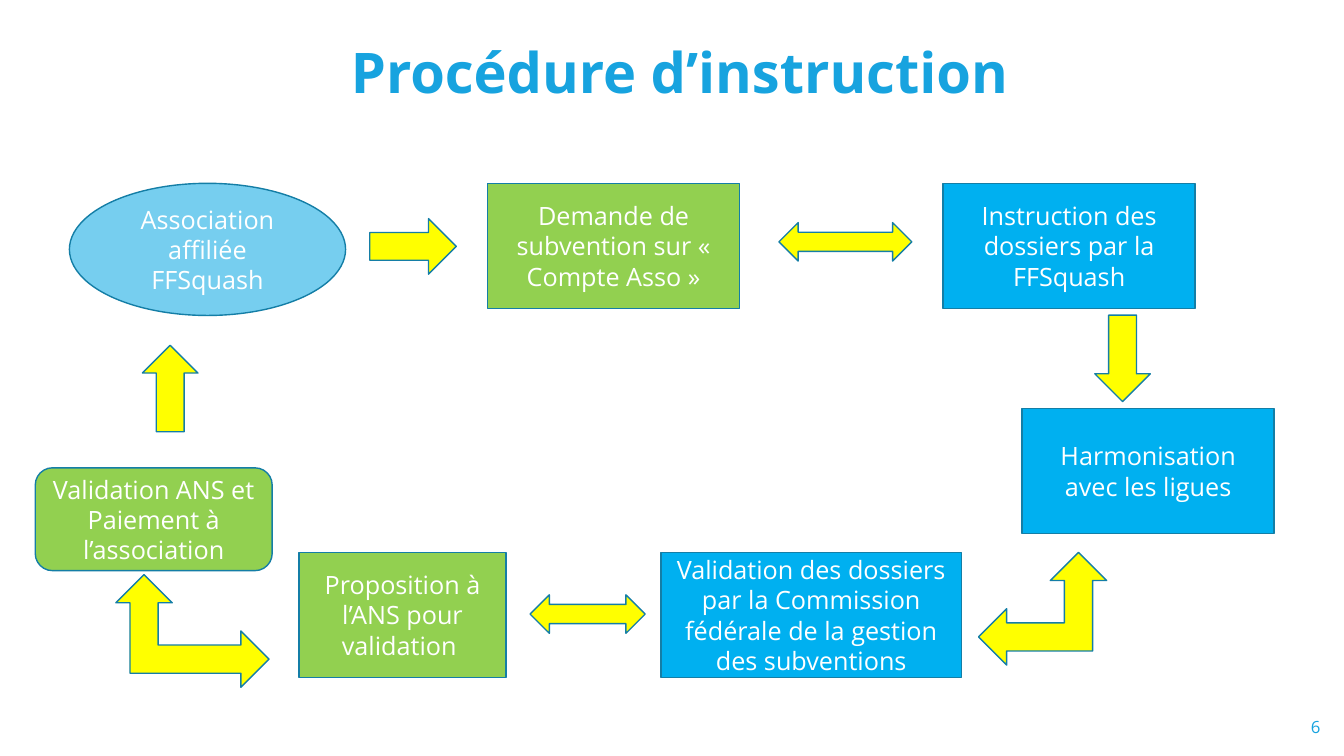
from pptx import Presentation
from pptx.dml.color import RGBColor
from pptx.enum import shapes, text
from pptx.util import Cm, Pt

TITLE_BLUE = RGBColor(0x17, 0xA3, 0xDF)
OUTLINE = RGBColor(0x14, 0x7E, 0xA6)
SKY = RGBColor(0x76, 0xCE, 0xEF)
BLUE = RGBColor(0x00, 0xB0, 0xF0)
GREEN = RGBColor(0x92, 0xD0, 0x50)
YELLOW = RGBColor(0xFF, 0xFF, 0x00)
WHITE = RGBColor(0xFF, 0xFF, 0xFF)

KIND = shapes.MSO_SHAPE
ALIGN = text.PP_ALIGN
ANCHOR = text.MSO_ANCHOR

TOP_ROW, BOTTOM_ROW = 4.62, 13.92
STEP_WIDTH, STEP_HEIGHT = 6.35, 3.15
ARROW_LENGTH, ARROW_HEIGHT = 2.18, 1.4
DOUBLE_HEIGHT = 0.97

STEPS = [
    (KIND.OVAL, SKY, 1.75, TOP_ROW, 6.96, 3.33, "Association affiliée FFSquash"),
    (KIND.RECTANGLE, GREEN, 12.29, TOP_ROW, STEP_WIDTH, STEP_HEIGHT,
     "Demande de subvention sur « Compte Asso »"),
    (KIND.RECTANGLE, BLUE, 23.77, TOP_ROW, STEP_WIDTH, STEP_HEIGHT,
     "Instruction des dossiers par la FFSquash"),
    (KIND.RECTANGLE, BLUE, 25.76, 10.29, STEP_WIDTH, STEP_HEIGHT,
     "Harmonisation avec les ligues"),
    (KIND.RECTANGLE, BLUE, 16.66, BOTTOM_ROW, 7.57, STEP_HEIGHT,
     "Validation des dossiers par la Commission fédérale de la gestion des subventions"),
    (KIND.RECTANGLE, GREEN, 7.54, BOTTOM_ROW, 5.21, STEP_HEIGHT,
     "Proposition à l’ANS pour validation "),
    (KIND.ROUNDED_RECTANGLE, GREEN, 0.89, 11.79, 5.97, 2.59,
     "Validation ANS et Paiement à l’association"),
]

ARROWS = [
    (KIND.RIGHT_ARROW, 9.32, 5.51, ARROW_LENGTH, ARROW_HEIGHT, 0),
    (KIND.LEFT_RIGHT_ARROW, 19.63, 5.61, 3.35, DOUBLE_HEIGHT, 0),
    (KIND.RIGHT_ARROW, 27.2, 8.33, ARROW_LENGTH, ARROW_HEIGHT, 90),
    (KIND.LEFT_UP_ARROW, 24.66, BOTTOM_ROW, 3.23, 2.84, 0),
    (KIND.LEFT_RIGHT_ARROW, 13.36, 14.99, 2.9, DOUBLE_HEIGHT, 0),
    (KIND.LEFT_UP_ARROW, 3.43, 13.97, 2.84, 3.86, 90),
    (KIND.RIGHT_ARROW, 3.2, 9.09, ARROW_LENGTH, ARROW_HEIGHT, 270),
]


def write(frame, wording, size=18, color=WHITE, bold=False, align=ALIGN.CENTER,
          anchor=ANCHOR.MIDDLE, spacing=None):
    """Put one formatted paragraph into a text frame."""
    frame.word_wrap = True
    frame.auto_size = text.MSO_AUTO_SIZE.NONE
    frame.vertical_anchor = anchor
    paragraph = frame.paragraphs[0]
    paragraph.alignment = align
    paragraph.line_spacing = spacing
    run = paragraph.add_run()
    run.text = wording
    run.font.name = "Open Sans"
    run.font.size = Pt(size)
    run.font.bold = bold
    run.font.color.rgb = color


def add_title(slide, wording):
    """Move and fill the title placeholder."""
    title = slide.shapes.title
    title.left, title.top, title.width, title.height = Cm(1.47), Cm(1.02), Cm(31.67), Cm(3.68)
    write(title.text_frame, wording, size=40, color=TITLE_BLUE, bold=True,
          anchor=ANCHOR.TOP, spacing=0.9)
    title.text_frame.margin_right = Cm(0.62)


def add_outlined(slide, kind, fill, left, top, width, height):
    """Add a filled preset shape with the common outline."""
    shape = slide.shapes.add_shape(kind, Cm(left), Cm(top), Cm(width), Cm(height))
    shape.shadow.inherit = False
    shape.fill.solid()
    shape.fill.fore_color.rgb = fill
    shape.line.color.rgb = OUTLINE
    shape.line.width = Pt(1)
    return shape


def add_step(slide, kind, fill, left, top, width, height, wording):
    """Add one labelled step of the procedure."""
    step = add_outlined(slide, kind, fill, left, top, width, height)
    write(step.text_frame, wording)


def add_arrow(slide, kind, left, top, width, height, rotation):
    """Add one yellow block arrow."""
    arrow = add_outlined(slide, kind, YELLOW, left, top, width, height)
    arrow.rotation = rotation


def add_page_number(slide, number):
    """Add the page number at the lower right."""
    page = slide.shapes.add_textbox(Cm(31.55), Cm(17.98), Cm(1.98), Cm(0.69))
    write(page.text_frame, number, size=12, color=TITLE_BLUE, align=ALIGN.RIGHT)


def main():
    """Build and save the slide."""
    deck = Presentation()
    deck.slide_width, deck.slide_height = Cm(33.87), Cm(19.05)
    slide = deck.slides.add_slide(deck.slide_layouts[5])
    add_title(slide, "Procédure d’instruction")
    for step in STEPS:
        add_step(slide, *step)
    for arrow in ARROWS:
        add_arrow(slide, *arrow)
    add_page_number(slide, "6")
    deck.save("out.pptx")


if __name__ == "__main__":
    main()
